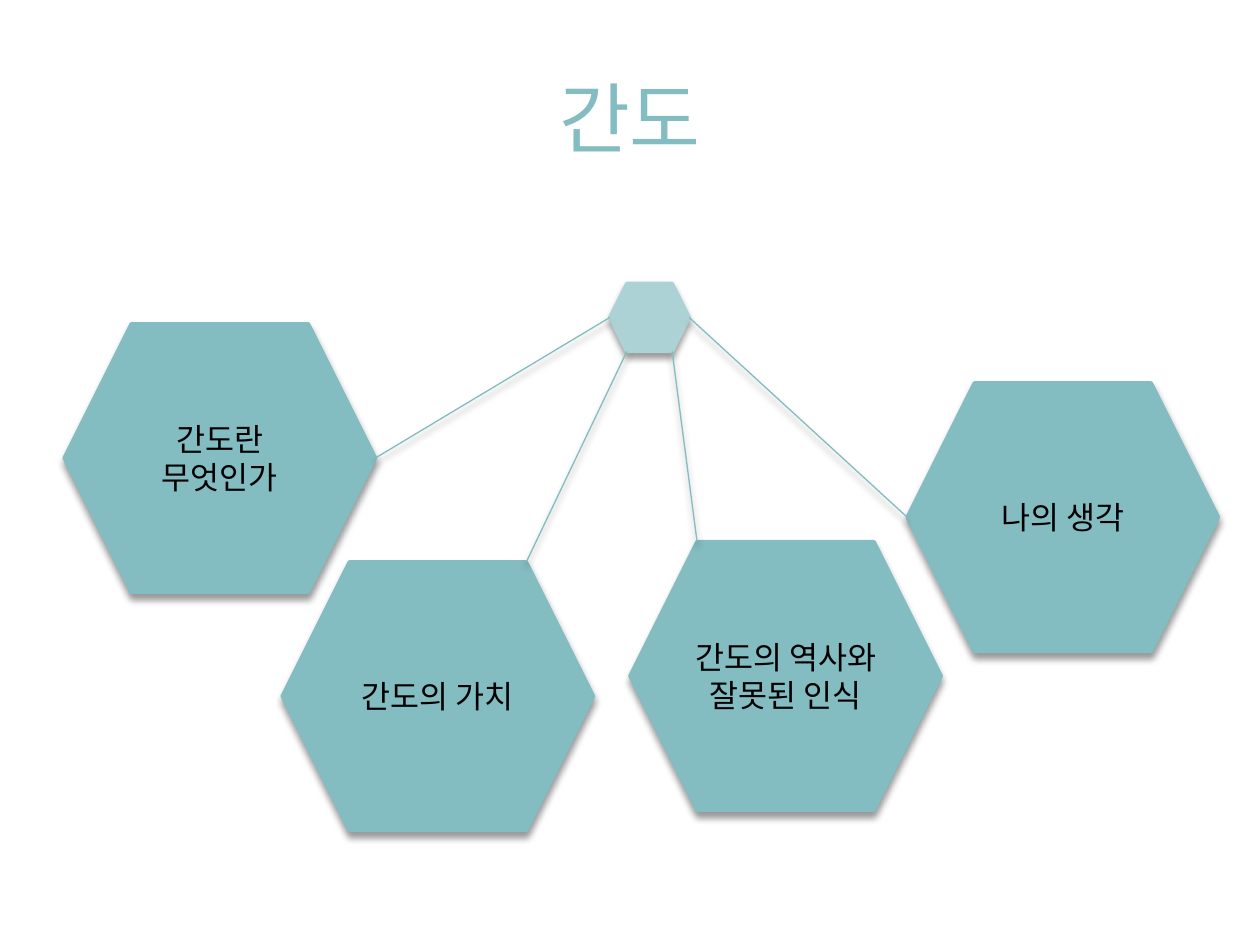
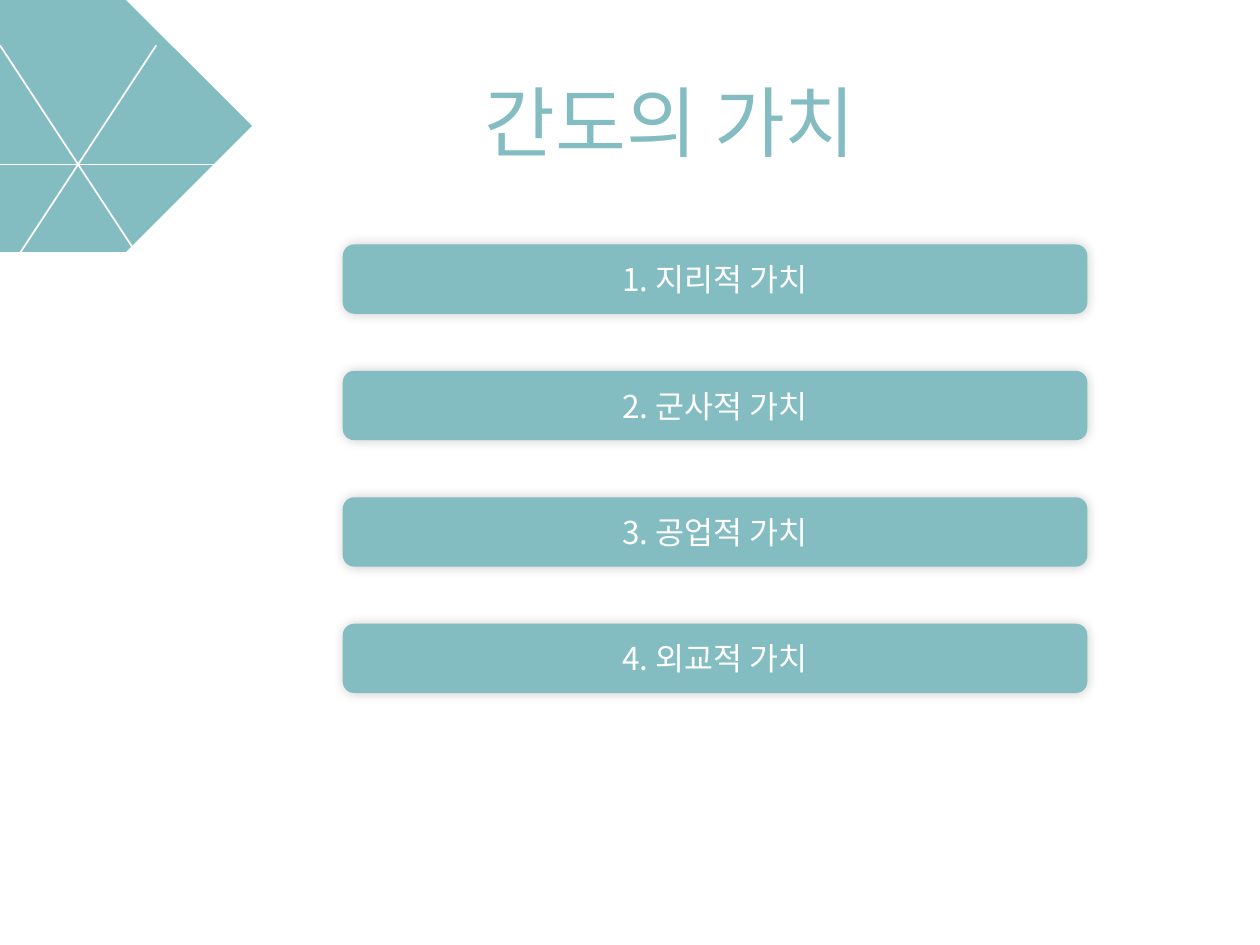
from lxml import etree
from pptx import Presentation
from pptx.dml.color import RGBColor
from pptx.enum.shapes import MSO_CONNECTOR, MSO_SHAPE
from pptx.enum.text import MSO_ANCHOR, PP_ALIGN
from pptx.oxml.ns import qn
from pptx.util import Inches, Pt

HEXAGON = MSO_SHAPE.HEXAGON
ROUNDED = MSO_SHAPE.ROUNDED_RECTANGLE
STRAIGHT = MSO_CONNECTOR.STRAIGHT
MIDDLE = MSO_ANCHOR.MIDDLE
CENTER = PP_ALIGN.CENTER

COLORS = {"teal": "83BCC1", "pale": "ADD2D6", "white": "FFFFFF", "black": "000000"}
FONT = "Noto Sans CJK KR"
DROP_SHADOW = {"alpha": 40, "blur": 4, "distance": 3, "angle": 90}
GLOW_SHADOW = {"alpha": 20, "blur": 6, "distance": 0, "angle": 225}

HUB_BOX = (4.84, 2.25, 0.63, 0.54)
TOPIC_SIZE = (2.47, 2.13)
TOPICS = [
    ((0.51, 2.57), ["간도란 무엇인가"], "left", "right"),
    ((2.24, 4.46), ["간도의 가치"], "bottom_left", "top_right"),
    ((5, 4.3), ["간도의 역사와", "잘못된 인식"], "bottom_right", "top_left"),
    ((7.2, 3.04), ["나의 생각"], "right", "left"),
]
VALUES = ["1. 지리적 가치", "2. 군사적 가치", "3. 공업적 가치", "4. 외교적 가치"]


def rgb(name):
    return RGBColor.from_string(COLORS[name])


def set_effects(part, shadow=None):
    properties = part._element.spPr
    for old in properties.findall(qn("a:effectLst")):
        properties.remove(old)
    effects = etree.SubElement(properties, qn("a:effectLst"))
    if shadow:
        outer = etree.SubElement(
            effects, qn("a:outerShdw"),
            blurRad=str(Pt(shadow["blur"])), dist=str(Pt(shadow["distance"])),
            dir=str(shadow["angle"] * 60000), algn="ctr", rotWithShape="0")
        color = etree.SubElement(outer, qn("a:srgbClr"), val=COLORS["black"])
        etree.SubElement(color, qn("a:alpha"), val=str(shadow["alpha"] * 1000))


def write_text(frame, lines, size, color):
    frame.word_wrap = True
    frame.vertical_anchor = MIDDLE
    for index, line in enumerate(lines):
        paragraph = frame.add_paragraph() if index else frame.paragraphs[0]
        paragraph.alignment = CENTER
        run = paragraph.add_run()
        run.text = line
        run.font.size = Pt(size)
        run.font.name = FONT
        run.font.color.rgb = rgb(color)
        etree.SubElement(run.font._element, qn("a:ea"), typeface=FONT)


def add_title(slide, box, text):
    title = slide.shapes.add_textbox(*map(Inches, box))
    write_text(title.text_frame, [text], 44, "teal")


def add_panel(slide, preset, box, color, shadow, outline=None):
    panel = slide.shapes.add_shape(preset, *map(Inches, box))
    panel.fill.solid()
    panel.fill.fore_color.rgb = rgb(color)
    if outline:
        panel.line.color.rgb = rgb(color)
        panel.line.width = Pt(outline)
    else:
        panel.line.fill.background()
    set_effects(panel, shadow)
    return panel


def add_line(shapes, start, end, color, width, shadow=None):
    line = shapes.add_connector(STRAIGHT, *map(Inches, (*start, *end)))
    line.line.color.rgb = rgb(color)
    line.line.width = Pt(width)
    set_effects(line, shadow)


def hexagon_corners(box):
    left, top, width, height = box
    slant = height / 4
    right, bottom = left + width, top + height
    return {
        "left": (left, top + height / 2),
        "right": (right, top + height / 2),
        "top_left": (left + slant, top),
        "top_right": (right - slant, top),
        "bottom_left": (left + slant, bottom),
        "bottom_right": (right - slant, bottom),
    }


def add_topic_map(slide, hub_box, topics):
    add_panel(slide, HEXAGON, hub_box, "pale", DROP_SHADOW, 2)
    hub_corners = hexagon_corners(hub_box)
    spokes = []
    for position, lines, hub_corner, topic_corner in topics:
        box = (*position, *TOPIC_SIZE)
        topic = add_panel(slide, HEXAGON, box, "teal", DROP_SHADOW, 2)
        write_text(topic.text_frame, lines, 18, "black")
        spokes.append((hub_corners[hub_corner], hexagon_corners(box)[topic_corner]))
    for start, end in spokes:
        add_line(slide.shapes, start, end, "teal", 0.75, DROP_SHADOW)


def add_value_bars(slide, box, values, bar_height):
    left, top, width, height = box
    step = (height - bar_height) / (len(values) - 1)
    for index, value in enumerate(values):
        bar_box = (left, top + index * step, width, bar_height)
        bar = add_panel(slide, ROUNDED, bar_box, "teal", GLOW_SHADOW)
        write_text(bar.text_frame, [value], 18, "white")


def add_cut_hexagon(slide, box, slant):
    left, top, width, height = box
    right, bottom, middle = left + width, top + height, top + height / 2
    shoulder = right - slant
    ornament = slide.shapes.add_group_shape()
    builder = ornament.shapes.build_freeform(left, bottom, scale=Inches(1))
    builder.add_line_segments(
        [(left, top), (shoulder, top), (right, middle), (shoulder, bottom)], close=True)
    body = builder.convert_to_shape()
    body.fill.solid()
    body.fill.fore_color.rgb = rgb("teal")
    body.line.fill.background()
    set_effects(body)
    for start, end in [
        ((shoulder, bottom), (left, top)),
        ((left, bottom), (shoulder, top)),
        ((right, middle), (left, middle)),
    ]:
        add_line(ornament.shapes, start, end, "white", 1)


def build_overview(slide):
    add_title(slide, (0.5, 0.3, 9, 1.25), "간도")
    add_topic_map(slide, HUB_BOX, TOPICS)


def build_values(slide):
    add_title(slide, (2.09, 0.21, 6.46, 1.5), "간도의 가치")
    add_value_bars(slide, (2.72, 1.94, 5.91, 3.56), VALUES, 0.55)
    add_cut_hexagon(slide, (0, 0.36, 1.7, 1.89), 0.46)


def main():
    deck = Presentation()
    deck.slide_width, deck.slide_height = Inches(10), Inches(7.5)
    for build in (build_overview, build_values):
        build(deck.slides.add_slide(deck.slide_layouts[6]))
    deck.save("out.pptx")


if __name__ == "__main__":
    main()
